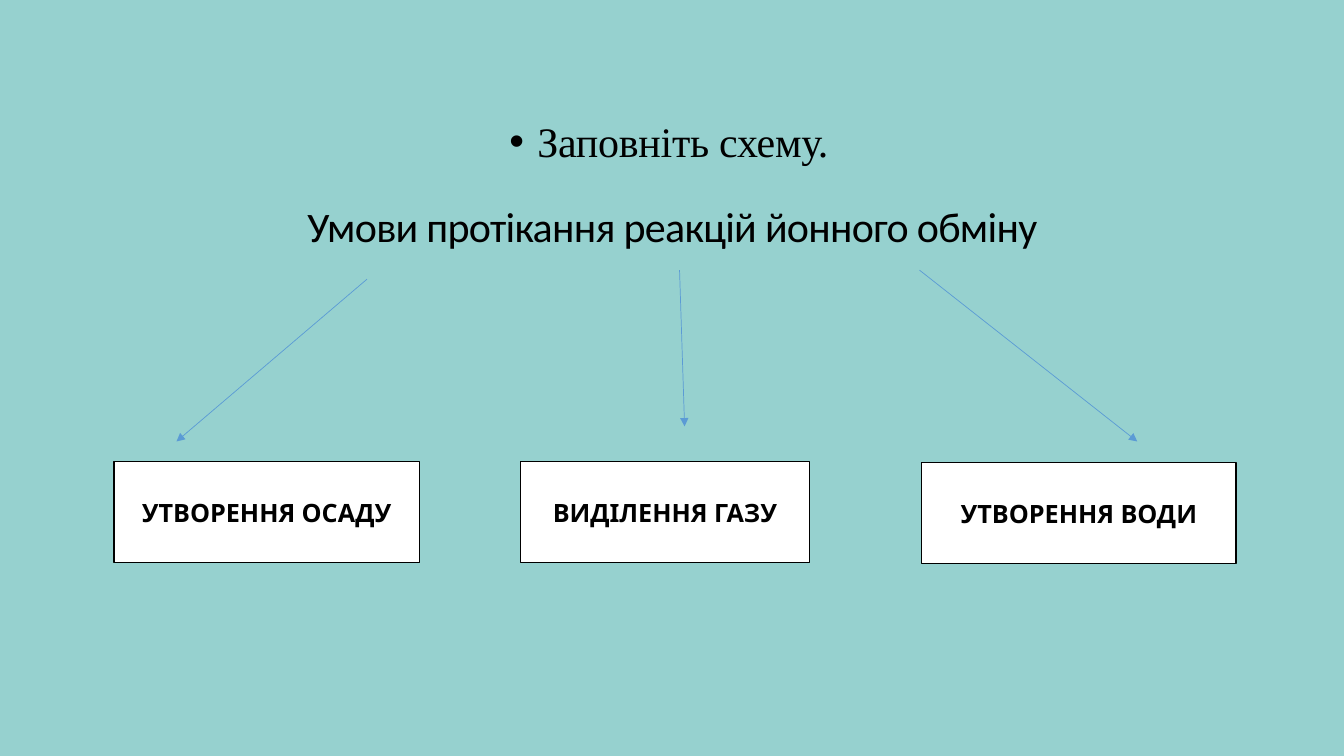
from lxml.etree import SubElement
from pptx import Presentation
from pptx.dml.color import RGBColor
from pptx.enum.shapes import MSO_CONNECTOR as Connector, MSO_SHAPE as Shape
from pptx.enum.text import MSO_ANCHOR as Anchor, PP_ALIGN as Align
from pptx.oxml.ns import qn
from pptx.util import Inches, Pt


def color(value):
    return RGBColor.from_string(value)


class SchemeSlide:
    INK = "000000"
    PAPER = "FFFFFF"
    ARROW = "5B9BD5"
    BACKGROUND = "96D1CF"

    def __init__(self, deck):
        self.page = deck.slides.add_slide(deck.slide_layouts[6])
        fill = self.page.background.fill
        fill.solid()
        fill.fore_color.rgb = color(self.BACKGROUND)

    def label(self, box, text, font, size, bold=False, tracking=0):
        frame = box.text_frame
        frame.word_wrap = True
        para = frame.paragraphs[0]
        para.alignment = Align.CENTER
        span = para.add_run()
        span.text = text
        span.font.name = font
        span.font.size = Pt(size)
        span.font.bold = bold
        span.font.color.rgb = color(self.INK)
        if tracking:
            span.font._element.set("spc", str(round(tracking * 100)))
        return para

    def heading(self, place, text, font, tracking, line_spacing, anchor):
        box = self.page.shapes.add_textbox(*map(Inches, place))
        box.text_frame.vertical_anchor = anchor
        para = self.label(box, text, font, 30, tracking=tracking)
        para.line_spacing = line_spacing
        return para

    def bullet(self, para, indent, hanging):
        props = para._p.get_or_add_pPr()
        props.set("marL", str(Inches(indent)))
        props.set("indent", str(-Inches(hanging)))
        tint = SubElement(props, qn("a:buClr"))
        SubElement(tint, qn("a:srgbClr"), val=self.INK)
        SubElement(props, qn("a:buFont"), typeface="Arial")
        SubElement(props, qn("a:buChar"), char="•")

    def card(self, place, text):
        box = self.page.shapes.add_shape(Shape.RECTANGLE, *map(Inches, place))
        box.shadow.inherit = False
        box.fill.solid()
        box.fill.fore_color.rgb = color(self.PAPER)
        box.line.color.rgb = color(self.INK)
        box.line.width = Pt(1)
        box.text_frame.vertical_anchor = Anchor.MIDDLE
        self.label(box, text, "Karla", 18, bold=True)

    def arrow(self, start, end):
        link = self.page.shapes.add_connector(
            Connector.STRAIGHT, *map(Inches, start + end))
        link.line.color.rgb = color(self.ARROW)
        link.line.width = Pt(0.5)
        outline = link._element.spPr.find(qn("a:ln"))
        SubElement(outline, qn("a:tailEnd"), type="triangle")
        SubElement(link._element.spPr, qn("a:effectLst"))


def main():
    deck = Presentation()
    deck.slide_width = Inches(13.33)
    deck.slide_height = Inches(7.5)
    scheme = SchemeSlide(deck)

    task = scheme.heading((0.92, 0.55, 11.5, 1.45), "Заповніть схему. ",
                          "Times New Roman", -0.2, 1.5, Anchor.MIDDLE)
    scheme.bullet(task, 0.31, 0.28)
    topic = scheme.heading((0.92, 2, 11.5, 4.76),
                           "Умови протікання реакцій йонного обміну",
                           "Calibri", -0.5, 0.9, Anchor.TOP)
    topic.space_before = Pt(10)

    conditions = [
        ("УТВОРЕННЯ ОСАДУ", 1.13, 4.58, 3.03, (3.64, 2.77), (1.75, 4.38)),
        ("ВИДІЛЕННЯ ГАЗУ", 5.16, 4.58, 2.87, (6.74, 2.68), (6.79, 4.23)),
        ("УТВОРЕННЯ ВОДИ", 9.14, 4.59, 3.12, (9.12, 2.68), (11.28, 4.38)),
    ]
    for text, left, top, width, start, end in conditions:
        scheme.card((left, top, width, 1), text)
        scheme.arrow(start, end)

    deck.save("out.pptx")


if __name__ == "__main__":
    main()
